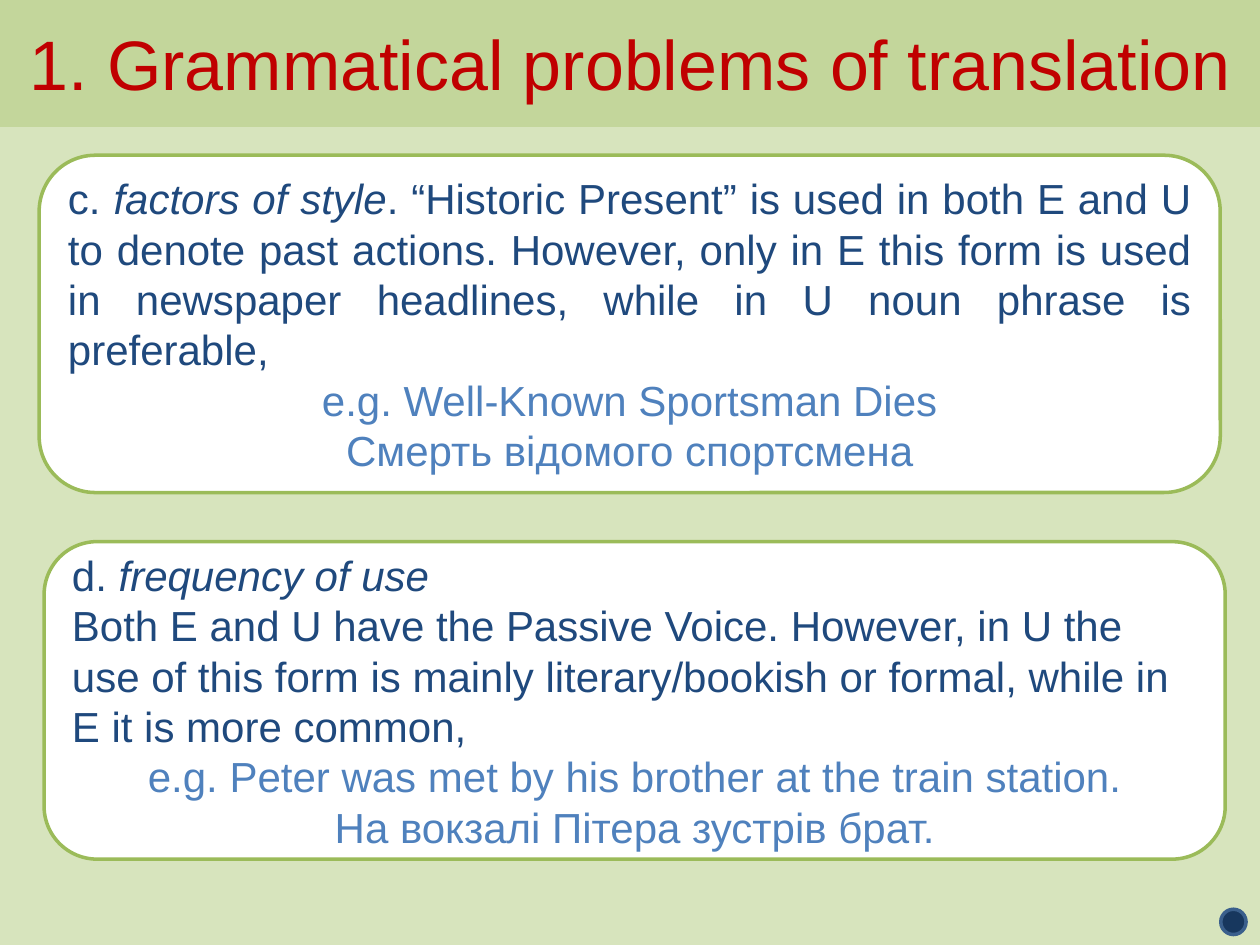
from pptx import Presentation
from pptx.dml.color import RGBColor
from pptx.enum.shapes import MSO_SHAPE
from pptx.enum.text import MSO_ANCHOR, MSO_AUTO_SIZE, PP_ALIGN
from pptx.util import Cm, Pt

ROUNDED, OVAL = MSO_SHAPE.ROUNDED_RECTANGLE, MSO_SHAPE.OVAL
LEFT, CENTER, JUSTIFY = PP_ALIGN.LEFT, PP_ALIGN.CENTER, PP_ALIGN.JUSTIFY
MIDDLE, NO_AUTOFIT = MSO_ANCHOR.MIDDLE, MSO_AUTO_SIZE.NONE

THEME = {
    "font": "Arial",
    "title_size": 40,
    "body_size": 24,
    "line_width": 2,
    "background": "D7E4BD",
    "band": "C3D69B",
    "title": "C00000",
    "card": "FFFFFF",
    "card_line": "9BBB59",
    "body": "1F497D",
    "example": "4F81BD",
    "dot": "17375E",
    "dot_line": "3A5F8C",
}

# Positions are left, top, width, height in centimetres.
SLIDE_SIZE = (25.4, 19.05)
TITLE_BOX = (0, 0, 25.4, 2.52)
DOT_BOX = (24.61, 18.33, 0.51, 0.51)
TITLE = "1. Grammatical problems of translation"

# A paragraph is alignment, colour name and runs of (text, italic).
CARDS = [
    {
        "box": (0.79, 3.13, 23.81, 6.8),
        "paragraphs": [
            (JUSTIFY, "body", [
                ("c. ", False),
                ("factors of style", True),
                (". “Historic Present” is used in both E and U to denote past "
                 "actions. However, only in E this form is used in newspaper "
                 "headlines, while in U noun phrase is preferable,", False),
            ]),
            (CENTER, "example", [("e.g. Well-Known Sportsman Dies", False)]),
            (CENTER, "example", [("Смерть відомого спортсмена", False)]),
        ],
    },
    {
        "box": (0.89, 10.92, 23.81, 6.4),
        "paragraphs": [
            (LEFT, "body", [("d. ", False), ("frequency of use", True)]),
            (LEFT, "body", [
                ("Both E and U have the Passive Voice. However, in U the use of "
                 "this form is mainly literary/bookish or formal, while in E it "
                 "is more common,", False),
            ]),
            (CENTER, "example", [
                ("e.g. Peter was met by his brother at the train station.", False),
            ]),
            (CENTER, "example", [("На вокзалі Пітера зустрів брат.", False)]),
        ],
    },
]


def color(name):
    return RGBColor.from_string(THEME[name])


def paint(shape, fill, line):
    shape.fill.solid()
    shape.fill.fore_color.rgb = color(fill)
    shape.line.color.rgb = color(line)
    shape.line.width = Pt(THEME["line_width"])


def add_shape(slide, kind, box, fill, line):
    shape = slide.shapes.add_shape(kind, *map(Cm, box))
    shape.shadow.inherit = False
    paint(shape, fill, line)
    return shape


def write(shape, paragraphs, size):
    frame = shape.text_frame
    frame_format = {"word_wrap": True, "auto_size": NO_AUTOFIT,
                    "vertical_anchor": MIDDLE}
    for name, value in frame_format.items():
        setattr(frame, name, value)
    for index, (alignment, color_name, runs) in enumerate(paragraphs):
        paragraph = frame.add_paragraph() if index else frame.paragraphs[0]
        paragraph.alignment = alignment
        for text, italic in runs:
            run = paragraph.add_run()
            run.text = text
            run_format = {"name": THEME["font"], "size": Pt(THEME[size]),
                          "italic": italic}
            for name, value in run_format.items():
                setattr(run.font, name, value)
            run.font.color.rgb = color(color_name)


def add_title(slide):
    title = slide.shapes.title
    for name, value in zip(("left", "top", "width", "height"), TITLE_BOX):
        setattr(title, name, Cm(value))
    paint(title, "band", "band")
    write(title, [(CENTER, "title", [(TITLE, False)])], "title_size")


def main():
    presentation = Presentation()
    presentation.slide_width, presentation.slide_height = map(Cm, SLIDE_SIZE)
    slide = presentation.slides.add_slide(presentation.slide_layouts[5])
    slide.background.fill.solid()
    slide.background.fill.fore_color.rgb = color("background")

    add_title(slide)
    for card in CARDS:
        shape = add_shape(slide, ROUNDED, card["box"], "card", "card_line")
        write(shape, card["paragraphs"], "body_size")
    add_shape(slide, OVAL, DOT_BOX, "dot", "dot_line")

    presentation.save("out.pptx")


if __name__ == "__main__":
    main()
